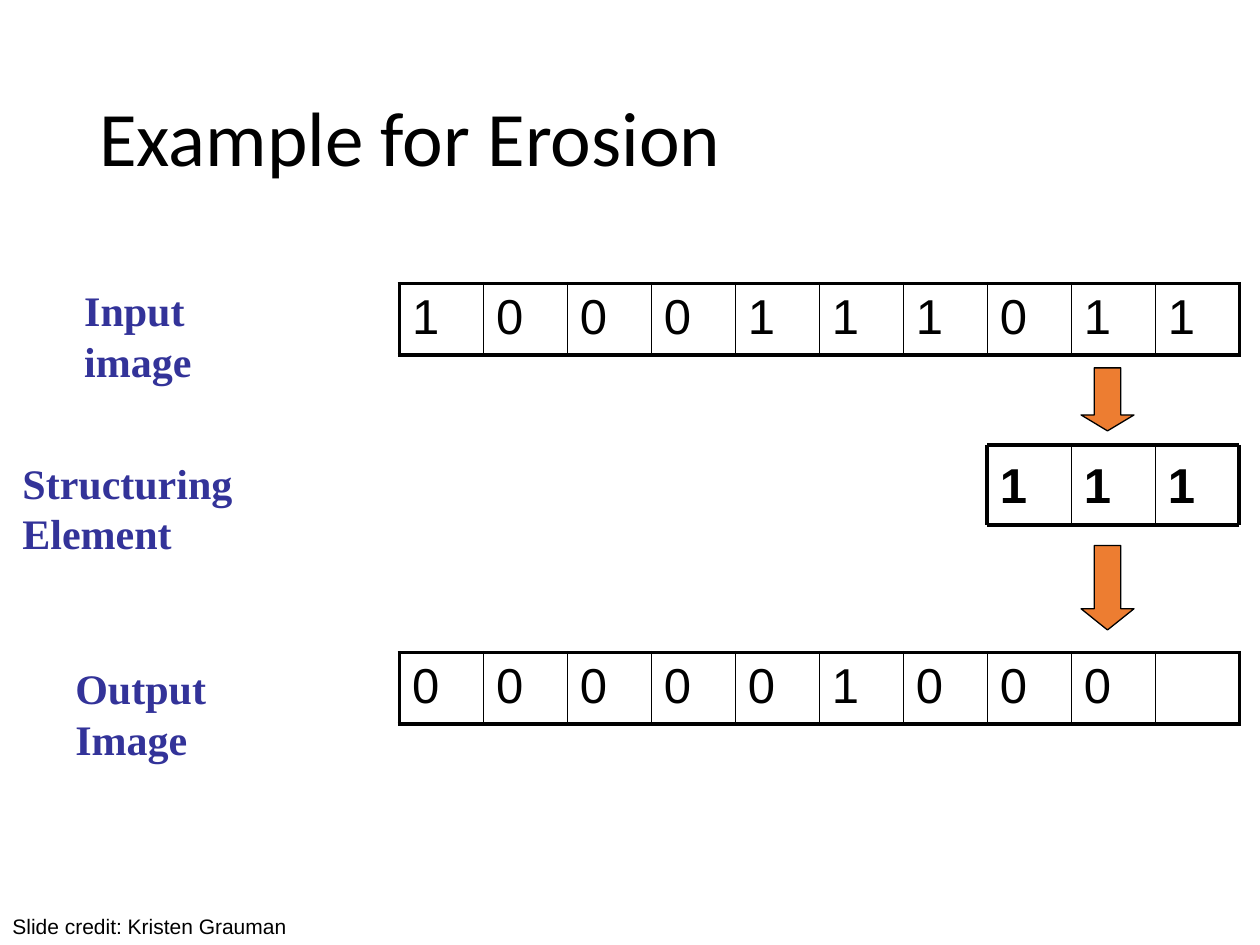
from dataclasses import dataclass

from lxml import etree
from pptx import Presentation
from pptx import util as u
from pptx.dml.color import RGBColor
from pptx.enum import shapes, text
from pptx.oxml.ns import qn


@dataclass(frozen=True)
class Theme:
    ink: str = "000000"
    label: str = "333399"
    arrow: str = "ED7D31"
    title_size: float = 44
    cell_size: float = 28
    label_size: float = 24
    credit_size: float = 12
    outer_line: float = 2.25
    inner_line: float = 1
    arrow_line: float = 0.75
    title_font: str = "Calibri"
    body_font: str = "Arial"
    label_font: str = "Times New Roman"


PIXEL = 2 / 3
ROW_LEFT = 3.17
ROW_RIGHT = ROW_LEFT + 10 * PIXEL


def write(frame, content, *, font, size, color, bold=False, spacing=None):
    paragraph = frame.paragraphs[0]
    paragraph.text = content
    if spacing:
        paragraph.line_spacing = spacing
    for run in paragraph.runs:
        run.font.name = font
        run.font.size = u.Pt(size)
        run.font.bold = bold
        run.font.color.rgb = RGBColor.from_string(color)


def set_border(cell, side, width, color):
    """Add one border; side is L, R, T or B, in that order."""
    line = etree.SubElement(cell._tc.get_or_add_tcPr(), qn(f"a:ln{side}"), w=str(u.Pt(width)))
    fill = etree.SubElement(line, qn("a:solidFill"))
    etree.SubElement(fill, qn("a:srgbClr"), val=color)


class SlideBuilder:
    def __init__(self, slide, theme):
        self.slide = slide
        self.theme = theme

    def text_box(self, left, top, width, height, content, *, wrap=True,
                 anchor=text.MSO_ANCHOR.TOP, top_inset=0.05, **style):
        box = self.slide.shapes.add_textbox(*map(u.Inches, (left, top, width, height)))
        box.text_frame.word_wrap = wrap
        box.text_frame.vertical_anchor = anchor
        box.text_frame.margin_top = u.Inches(top_inset)
        write(box.text_frame, content, **style)

    def label(self, left, top, width, content):
        theme = self.theme
        self.text_box(left, top, width, 0.5, content, wrap=False, font=theme.label_font,
                      size=theme.label_size, color=theme.label, bold=True)

    def line(self, x1, y1, x2, y2, width):
        line = self.slide.shapes.add_connector(
            shapes.MSO_CONNECTOR.STRAIGHT, *map(u.Inches, (x1, y1, x2, y2)))
        line.line.color.rgb = RGBColor.from_string(self.theme.ink)
        line.line.width = u.Pt(width)
        etree.SubElement(line._element.spPr, qn("a:effectLst"))

    def edge_width(self, index, last):
        return self.theme.outer_line if index in (0, last) else self.theme.inner_line

    def pixel_row(self, top, values):
        theme = self.theme
        count = len(values)
        height = 0.56
        frame = self.slide.shapes.add_table(
            1, count, *map(u.Inches, (ROW_LEFT, top, count * PIXEL, height)))
        table = frame.table
        table.first_row = table.horz_banding = False
        for index, value in enumerate(values):
            table.columns[index].width = u.Inches(PIXEL)
            cell = table.cell(0, index)
            write(cell.text_frame, value.strip(), font=theme.body_font,
                  size=theme.cell_size, color=theme.ink)
            widths = {
                "L": self.edge_width(index, count),
                "R": self.edge_width(index + 1, count),
                "T": theme.outer_line,
                "B": theme.outer_line,
            }
            for side, width in widths.items():
                set_border(cell, side, width, theme.ink)
            cell.fill.background()

    def structuring_element(self, top, height, values):
        """Draw a ruled window that lies under the last pixels of the row."""
        theme = self.theme
        count = len(values)
        left, bottom = ROW_RIGHT - count * PIXEL, top + height
        for index, value in enumerate(values):
            self.text_box(left + index * PIXEL, top, PIXEL, height, value, top_inset=0.08,
                          font=theme.body_font, size=theme.cell_size,
                          color=theme.ink, bold=True)
        for y in (top, bottom):
            self.line(left, y, ROW_RIGHT, y, theme.outer_line)
        for index in range(count + 1):
            x = left + index * PIXEL
            self.line(x, top, x, bottom, self.edge_width(index, count))

    def down_arrow(self, top, height, head):
        arrow = self.slide.shapes.add_shape(
            shapes.MSO_SHAPE.DOWN_ARROW, *map(u.Inches, (8.58, top, 0.42, height)))
        arrow.adjustments[0] = 0.5
        arrow.adjustments[1] = head
        arrow.shadow.inherit = False
        arrow.fill.solid()
        arrow.fill.fore_color.rgb = RGBColor.from_string(self.theme.arrow)
        arrow.line.color.rgb = RGBColor.from_string(self.theme.ink)
        arrow.line.width = u.Pt(self.theme.arrow_line)


def main():
    deck = Presentation()
    deck.slide_width, deck.slide_height = u.Inches(10), u.Inches(7.5)
    theme = Theme()
    erosion = SlideBuilder(deck.slides.add_slide(deck.slide_layouts[6]), theme)

    erosion.text_box(0.69, 0.4, 8.62, 1.45, "Example for Erosion",
                     anchor=text.MSO_ANCHOR.MIDDLE, font=theme.title_font,
                     size=theme.title_size, color=theme.ink, spacing=0.9)

    erosion.pixel_row(2.25, "1000111011")
    erosion.label(0.57, 2.21, 1.8, "Input\vimage")
    erosion.label(0.08, 3.58, 2.89, "Structuring\vElement")
    erosion.pixel_row(5.18, "000001000 ")
    erosion.label(0.5, 5.21, 2.04, "Output\vImage")

    erosion.structuring_element(3.53, 0.64, "111")
    erosion.down_arrow(4.33, 0.67, head=0.4)
    erosion.down_arrow(2.92, 0.5, head=0.3)

    erosion.text_box(0, 7.2, 4.58, 0.3, "Slide credit: Kristen Grauman",
                     font=theme.body_font, size=theme.credit_size, color=theme.ink)
    deck.save("out.pptx")


if __name__ == "__main__":
    main()
